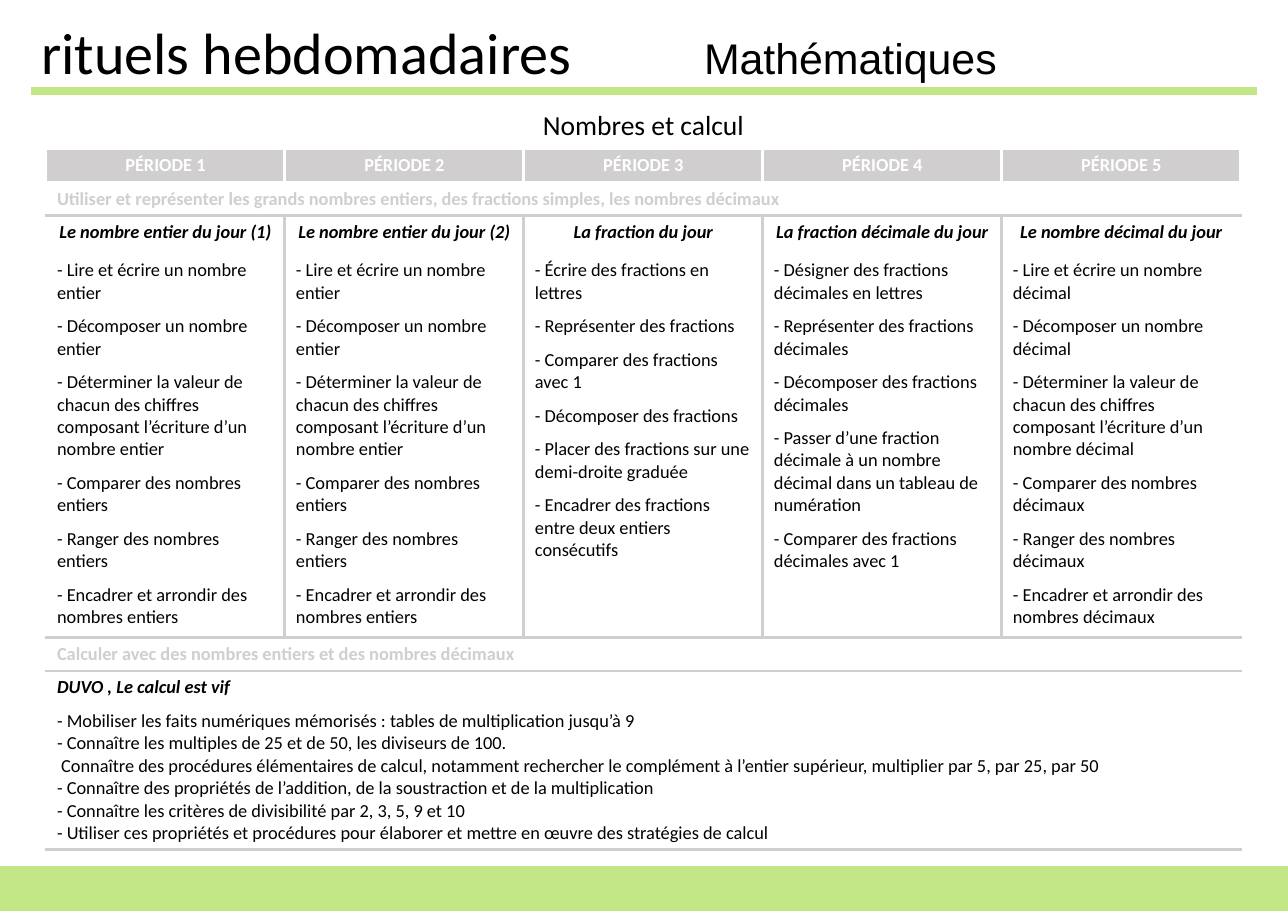
from lxml import etree
from pptx import Presentation
from pptx.dml.color import RGBColor
from pptx.enum import shapes, text
from pptx.oxml import ns
from pptx.util import Pt

PX = 8298
WIDTH, HEIGHT = 1288, 911
GREEN = RGBColor(0xC3, 0xE6, 0x86)
GREY = RGBColor(0xD0, 0xCE, 0xCE)
WHITE = RGBColor(0xFF, 0xFF, 0xFF)
BLACK = RGBColor(0, 0, 0)


def number_goals(one, many):
    return [
        f"- Lire et écrire un nombre {one}",
        f"- Décomposer un nombre {one}",
        f"- Déterminer la valeur de chacun des chiffres composant l’écriture d’un nombre {one}",
        f"- Comparer des nombres {many}",
        f"- Ranger des nombres {many}",
        f"- Encadrer et arrondir des nombres {many}",
    ]


HEADING = [("rituels hebdomadaires\t", "Calibri", 38), ("Mathématiques", "Arial", 28)]
SUBJECT = "Nombres et calcul"
NUMBERS = ("Utiliser et représenter les grands nombres entiers, des fractions simples, "
           "les nombres décimaux")
PERIODS = [
    ("Le nombre entier du jour (1)", number_goals("entier", "entiers")),
    ("Le nombre entier du jour (2)", number_goals("entier", "entiers")),
    ("La fraction du jour", [
        "- Écrire des fractions en lettres",
        "- Représenter des fractions",
        "- Comparer des fractions avec 1",
        "- Décomposer des fractions",
        "- Placer des fractions sur une demi-droite graduée",
        "- Encadrer des fractions entre deux entiers consécutifs",
    ]),
    ("La fraction décimale du jour", [
        "- Désigner des fractions décimales en lettres",
        "- Représenter des fractions décimales",
        "- Décomposer des fractions décimales",
        "- Passer d’une fraction décimale à un nombre décimal dans un tableau de numération",
        "- Comparer des fractions décimales avec 1",
    ]),
    ("Le nombre décimal du jour", number_goals("décimal", "décimaux")),
]
CALCULATION = "Calculer avec des nombres entiers et des nombres décimaux"
GAMES = "DUVO , Le calcul est vif"
GAME_GOALS = [
    "- Mobiliser les faits numériques mémorisés : tables de multiplication jusqu’à 9",
    "- Connaître les multiples de 25 et de 50, les diviseurs de 100.",
    " Connaître des procédures élémentaires de calcul, notamment rechercher le complément "
    "à l’entier supérieur, multiplier par 5, par 25, par 50",
    "- Connaître des propriétés de l’addition, de la soustraction et de la multiplication",
    "- Connaître les critères de divisibilité par 2, 3, 5, 9 et 10",
    "- Utiliser ces propriétés et procédures pour élaborer et mettre en œuvre des stratégies de calcul",
]
ROW_HEIGHTS = [44, 33, 33, 422, 33, 177]
COLUMN = 239
GAP = 7.3
# top, inner and bottom border of each row
ROW_BORDERS = [
    (WHITE, WHITE, WHITE), (WHITE, WHITE, WHITE), (WHITE, WHITE, GREY),
    (GREY, GREY, GREY), (GREY, WHITE, GREY), (GREY, WHITE, GREY),
]


def add_title(s):
    sp = s.shapes.title
    sp.left, sp.top, sp.width, sp.height = (v * PX for v in (30, 11, 1227, 82))
    tf = sp.text_frame
    tf.word_wrap = True
    tf.auto_size = text.MSO_AUTO_SIZE.NONE
    tf.vertical_anchor = text.MSO_ANCHOR.TOP
    p = tf.paragraphs[0]
    p.alignment = text.PP_ALIGN.LEFT
    for words, font, size in HEADING:
        r = p.add_run()
        r.text = words
        r.font.name, r.font.size = font, Pt(size)
        r.font.color.rgb = BLACK
    tabs = etree.SubElement(p._p.get_or_add_pPr(), ns.qn("a:tabLst"))
    etree.SubElement(tabs, ns.qn("a:tab"), pos=str(663 * PX), algn="l")


def add_bars(s):
    sp = s.shapes.add_shape(shapes.MSO_SHAPE.RECTANGLE, 0, 867 * PX, WIDTH * PX, 44 * PX)
    sp.shadow.inherit = False
    sp.fill.solid()
    sp.fill.fore_color.rgb = GREEN
    sp.line.color.rgb, sp.line.width = GREEN, Pt(1)
    rule = s.shapes.add_connector(shapes.MSO_CONNECTOR.STRAIGHT,
                                  1257 * PX, 91 * PX, 31 * PX, 91 * PX)
    rule.line.color.rgb, rule.line.width = GREEN, Pt(4.75)
    etree.SubElement(rule._element.spPr, ns.qn("a:effectLst"))


def write(tf, words, color=BLACK, size=12, bold=False, italic=False, center=False,
          before=0, after=0):
    p = tf.paragraphs[0] if not tf.text else tf.add_paragraph()
    p.text = words
    p.alignment = text.PP_ALIGN.CENTER if center else text.PP_ALIGN.LEFT
    p.space_before, p.space_after = Pt(before), Pt(after)
    f = p.runs[0].font
    f.name, f.size, f.bold, f.italic = "Calibri", Pt(size), bold, italic
    f.color.rgb = color


def set_borders(cell, left, right, top, bottom):
    tcPr = cell._tc.get_or_add_tcPr()
    for side, color in zip("LRTB", (left, right, top, bottom)):
        ln = etree.SubElement(tcPr, ns.qn(f"a:ln{side}"), w=str(Pt(2.25)))
        fill = etree.SubElement(ln, ns.qn("a:solidFill"))
        etree.SubElement(fill, ns.qn("a:srgbClr"), val=str(color))


def add_program(s):
    rows, cols = len(ROW_HEIGHTS), len(PERIODS)
    table = s.shapes.add_table(rows, cols, 46 * PX, 104 * PX, cols * COLUMN * PX,
                               sum(ROW_HEIGHTS) * PX).table
    table.first_row = table.horz_banding = False
    for column in table.columns:
        column.width = COLUMN * PX
    for i, (height, (top, inner, bottom)) in enumerate(zip(ROW_HEIGHTS, ROW_BORDERS)):
        table.rows[i].height = height * PX
        for j in range(cols):
            cell = table.cell(i, j)
            set_borders(cell, inner if j else WHITE, inner if j < cols - 1 else WHITE,
                        top, bottom)
            cell.fill.background()
    for i in (0, 2, 4, 5):
        table.cell(i, 0).merge(table.cell(i, cols - 1))

    write(table.cell(0, 0).text_frame, SUBJECT, size=18, center=True)
    for i, words in ((2, NUMBERS), (4, CALCULATION)):
        write(table.cell(i, 0).text_frame, words, GREY, bold=True)
    for j, (ritual, goals) in enumerate(PERIODS):
        header = table.cell(1, j)
        header.fill.solid()
        header.fill.fore_color.rgb = GREY
        write(header.text_frame, f"PÉRIODE {j + 1}", WHITE, bold=True, center=True)
        tf = table.cell(3, j).text_frame
        write(tf, ritual, bold=True, italic=True, center=True, after=3)
        for goal in goals:
            write(tf, goal, before=GAP)
    tf = table.cell(5, 0).text_frame
    write(tf, GAMES, bold=True, italic=True, after=GAP)
    for goal in GAME_GOALS:
        write(tf, goal)


def main():
    """Build the weekly mathematics rituals slide."""
    prs = Presentation()
    prs.slide_width, prs.slide_height = WIDTH * PX, HEIGHT * PX
    s = prs.slides.add_slide(prs.slide_layouts[5])
    add_title(s)
    add_bars(s)
    add_program(s)
    prs.save("out.pptx")


if __name__ == "__main__":
    main()
